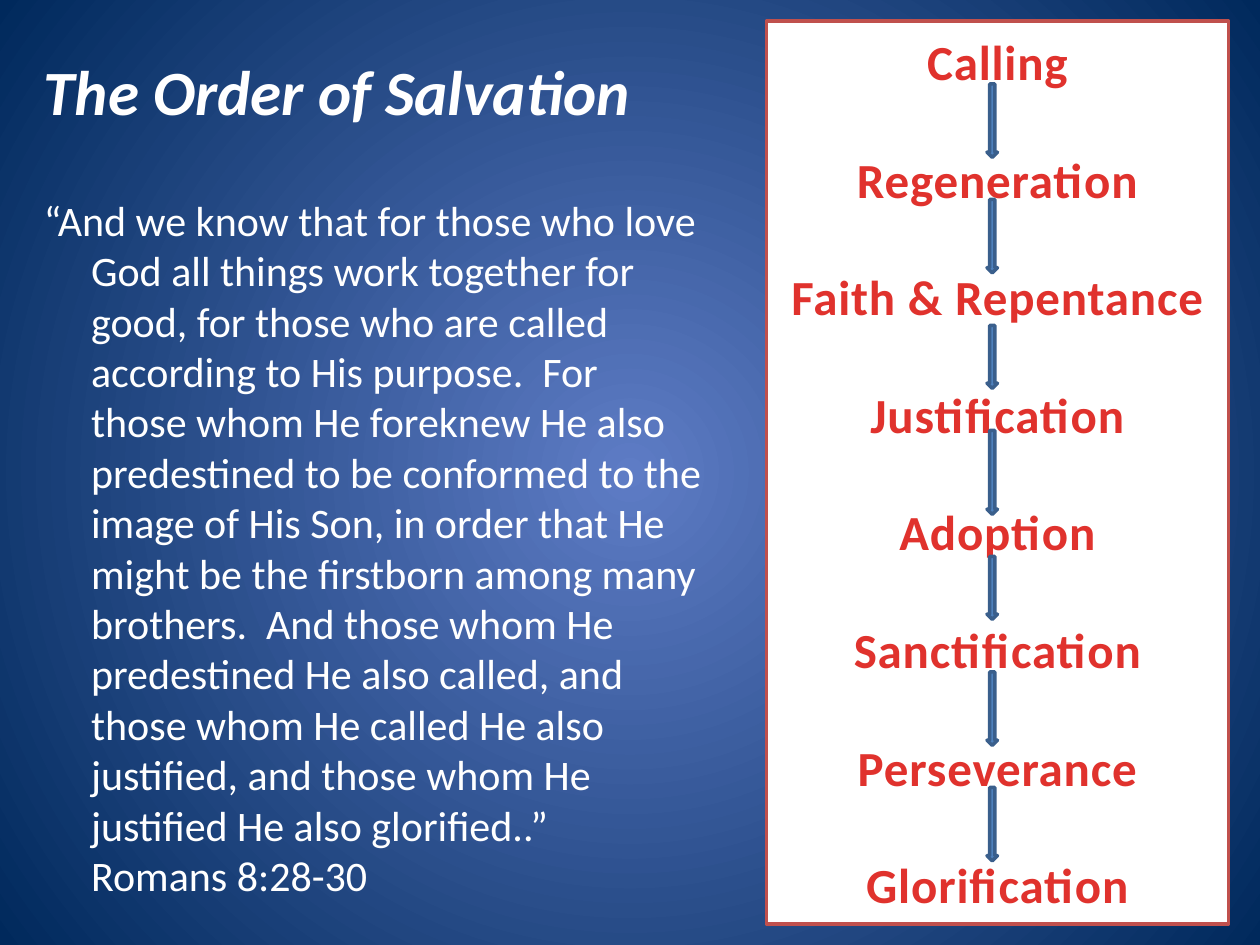
import pptx
import pptx.dml.color
import pptx.enum.shapes
import pptx.enum.text
import pptx.oxml.ns
import pptx.util
from lxml import etree

COLOURS = {
    "glow": "5E7CC5",
    "night": "00295C",
    "white": "FFFFFF",
    "frame": "C0504D",
    "step": "E0322D",
    "arrow": "4F81BD",
    "arrow_edge": "3A5F8C",
}
TITLE = "The Order of Salvation"
VERSE = (
    "“And we know that for those who love God all things work together for good, "
    "for those who are called according to His purpose.  For those whom He foreknew "
    "He also predestined to be conformed to the image of His Son, in order that He "
    "might be the firstborn among many brothers.  And those whom He predestined He "
    "also called, and those whom He called He also justified, and those whom He "
    "justified He also glorified..”"
)
CITATION = "Romans 8:28-30"
STEPS = [
    "Calling", "Regeneration", "Faith & Repentance", "Justification",
    "Adoption", "Sanctification", "Perseverance", "Glorification",
]
ARROW_ROWS = [(8, 7), (19, 7), (31, 6), (41, 8), (53, 6), (64, 7), (75, 7)]


class SlideBuilder:
    font = "Calibri"
    columns, rows = 120, 90

    def __init__(self, deck):
        self.cell_width = deck.slide_width / self.columns
        self.cell_height = deck.slide_height / self.rows
        self.slide = deck.slides.add_slide(deck.slide_layouts[6])

    def colour(self, key):
        return pptx.dml.color.RGBColor.from_string(COLOURS[key])

    def area(self, column, row, width, height):
        return (
            int(column * self.cell_width), int(row * self.cell_height),
            int(width * self.cell_width), int(height * self.cell_height),
        )

    def background(self, centre, edge):
        fill = self.slide.background.fill
        fill.gradient()
        for stop, key, position in zip(fill.gradient_stops, (centre, edge), (0, 1)):
            stop.color.rgb = self.colour(key)
            stop.position = position
        qn = pptx.oxml.ns.qn
        direction = next(self.slide.element.iter(qn("a:lin")))
        radial = etree.Element(qn("a:path"), path="circle")
        etree.SubElement(radial, qn("a:fillToRect"), l="50000", t="50000", r="50000", b="50000")
        direction.getparent().replace(direction, radial)

    def shape(self, kind, place, fill, line):
        shape = self.slide.shapes.add_shape(kind, *self.area(*place))
        shape.shadow.inherit = False
        shape.fill.solid()
        shape.fill.fore_color.rgb = self.colour(fill)
        shape.line.color.rgb = self.colour(line)
        shape.line.width = pptx.util.Pt(2)
        return shape

    def text_box(self, place):
        frame = self.slide.shapes.add_textbox(*self.area(*place)).text_frame
        frame.word_wrap = True
        return frame

    def paragraph(self, frame, text, size, colour, before=0, bold=False,
                  italic=False, centred=False, indent=None, spacing=0):
        first = frame.paragraphs[0]
        paragraph = frame.add_paragraph() if first.runs else first
        paragraph.text = text
        paragraph.space_before = pptx.util.Pt(before)
        if centred:
            paragraph.alignment = pptx.enum.text.PP_ALIGN.CENTER
        if indent is not None:
            properties = paragraph._p.get_or_add_pPr()
            properties.set("marL", str(pptx.util.Inches(0.375)))
            properties.set("indent", str(pptx.util.Inches(indent)))
        for run in paragraph.runs:
            run.font.name = self.font
            run.font.size = pptx.util.Pt(size)
            run.font.bold = bold
            run.font.italic = italic
            run.font.color.rgb = self.colour(colour)
            if spacing:
                run._r.get_or_add_rPr().set("spc", str(spacing))

    def step_panel(self, place, steps):
        panel = self.shape(pptx.enum.shapes.MSO_SHAPE.RECTANGLE, place, "white", "frame")
        frame = panel.text_frame
        frame.word_wrap = True
        frame.vertical_anchor = pptx.enum.text.MSO_ANCHOR.MIDDLE
        for index, step in enumerate(steps):
            self.paragraph(frame, step, 28, "step", before=33.6 if index else 0,
                           bold=True, centred=True, spacing=50)

    def arrow(self, row, height):
        self.shape(pptx.enum.shapes.MSO_SHAPE.DOWN_ARROW, (94, row, 1, height),
                   "arrow", "arrow_edge")


def main():
    deck = pptx.Presentation()
    deck.slide_width = pptx.util.Inches(10)
    deck.slide_height = pptx.util.Inches(7.5)
    builder = SlideBuilder(deck)
    builder.background("glow", "night")

    passage = builder.text_box((3, 4, 65, 82))
    passage.margin_top = pptx.util.Inches(0.08)
    builder.paragraph(passage, TITLE, 36, "white", bold=True, italic=True, indent=-0.375)
    builder.paragraph(passage, VERSE, 24, "white", before=38, indent=-0.375)
    builder.paragraph(passage, CITATION, 24, "white", indent=0)

    builder.step_panel((73, 2, 44, 86), STEPS)
    for row, height in ARROW_ROWS:
        builder.arrow(row, height)
    deck.save("out.pptx")


if __name__ == "__main__":
    main()
